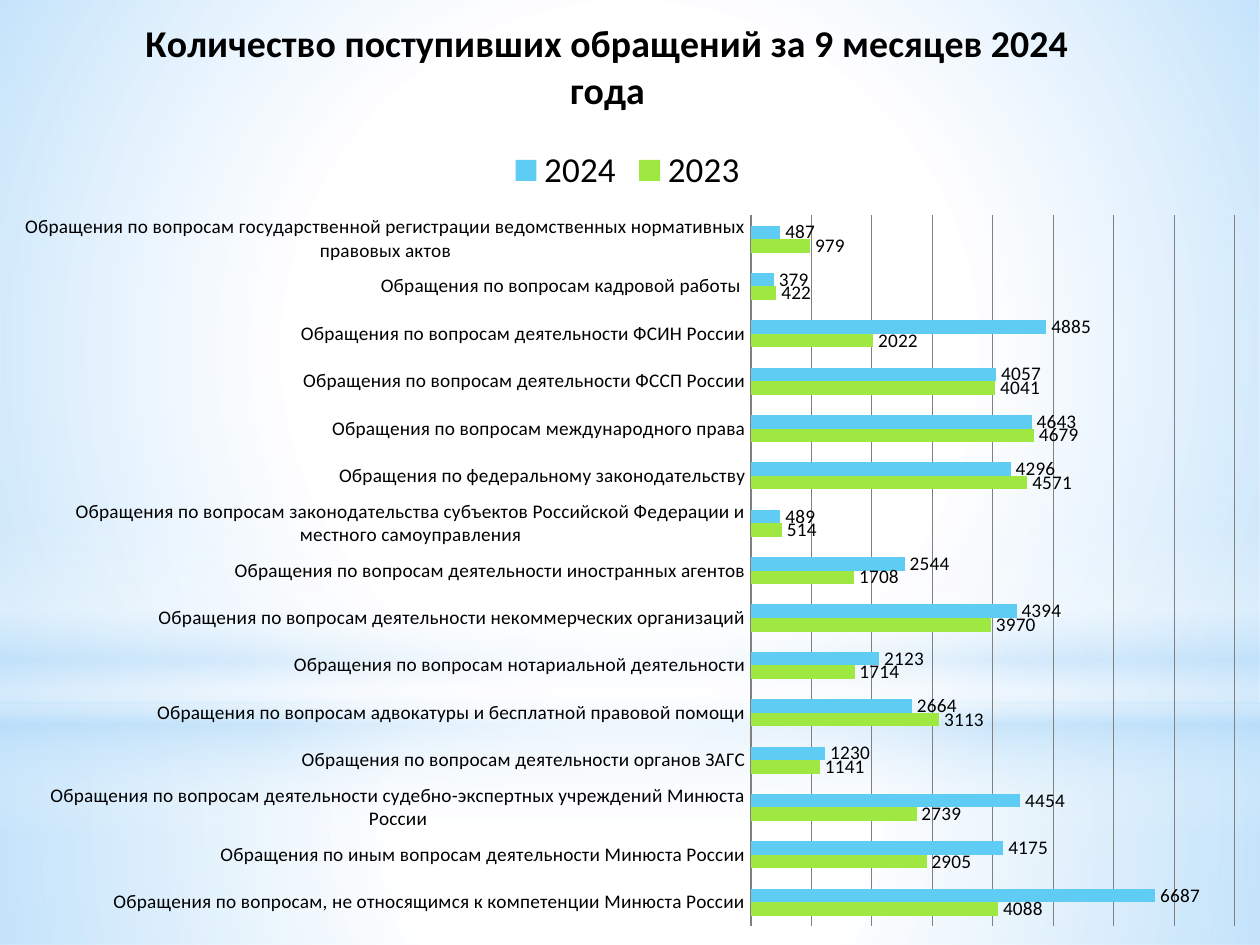
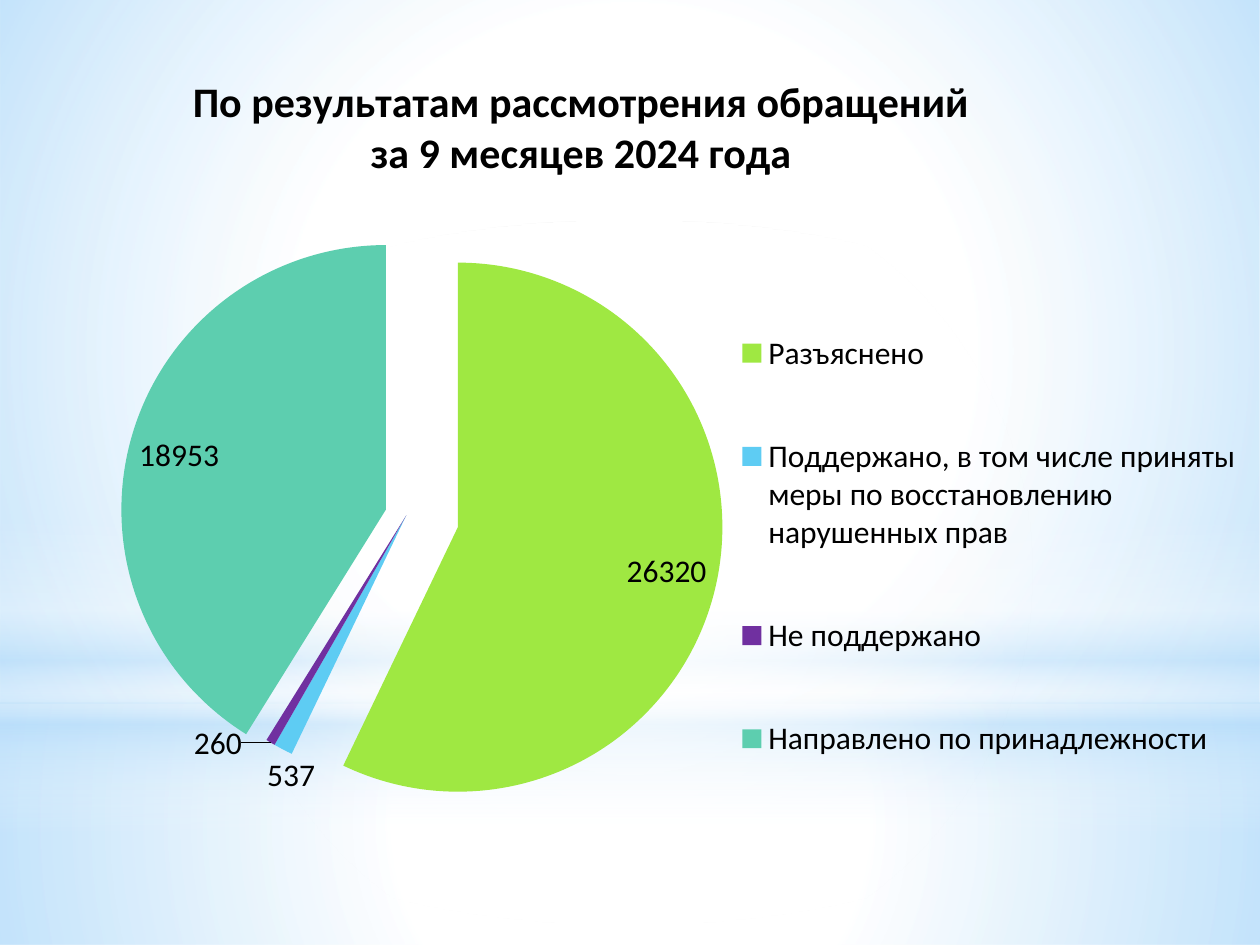
from pptx import Presentation
from pptx.chart.data import CategoryChartData as Data
from pptx.dml.color import RGBColor
from pptx.enum.chart import XL_CHART_TYPE as Kind, XL_LABEL_POSITION as Spot
from pptx.enum.chart import XL_LEGEND_POSITION as Side, XL_TICK_MARK as Tick
from pptx.enum.shapes import MSO_SHAPE as Form
from pptx.oxml import parse_xml
from pptx.oxml.ns import nsdecls
from pptx.util import Inches, Pt

WIDE, HIGH = Inches(10), Inches(7.5)
FONT, BASE = "Calibri", "Lato"
BLACK, GREY, WHITE, PALE = "000000", "808080", "FFFFFF", "B4DCFA"
LIME, SKY, PURPLE, TEAL = "9FE842", "5ECCF3", "7030A0", "5DCEAF"

# Topic, 2023, 2024; the first row is the lowest bar
TOPICS = [
    ("Обращения по вопросам, не относящимся к компетенции Минюста России", 4088, 6687),
    ("Обращения по иным вопросам деятельности Минюста России", 2905, 4175),
    ("Обращения по вопросам деятельности судебно-экспертных учреждений Минюста России",
     2739, 4454),
    ("Обращения по вопросам деятельности органов ЗАГС", 1141, 1230),
    ("Обращения по вопросам адвокатуры и бесплатной правовой помощи", 3113, 2664),
    ("Обращения по вопросам нотариальной деятельности", 1714, 2123),
    ("Обращения по вопросам деятельности некоммерческих организаций", 3970, 4394),
    ("Обращения по вопросам деятельности иностранных агентов", 1708, 2544),
    ("Обращения по вопросам законодательства субъектов Российской Федерации "
     "и местного самоуправления", 514, 489),
    ("Обращения по федеральному законодательству", 4571, 4296),
    ("Обращения по вопросам международного права", 4679, 4643),
    ("Обращения по вопросам деятельности ФССП России", 4041, 4057),
    ("Обращения по вопросам деятельности ФСИН России", 2022, 4885),
    ("Обращения по вопросам кадровой работы ", 422, 379),
    ("Обращения по вопросам государственной регистрации ведомственных "
     "нормативных правовых актов", 979, 487),
]
# Result, count, colour, shift of the slice in percent
RESULTS = [
    ("Разъяснено", 26320, LIME, 20),
    ("Поддержано, в том числе приняты меры по восстановлению нарушенных прав",
     537, SKY, 0),
    ("Не поддержано", 260, PURPLE, 0),
    ("Направлено по принадлежности", 18953, TEAL, 8),
]


def paint(fill, color):
    fill.solid()
    fill.fore_color.rgb = RGBColor.from_string(color)


def style(font, size, name=FONT, bold=False):
    font.name, font.size, font.bold = name, Pt(size), bold
    font.color.rgb = RGBColor.from_string(BLACK)


def blend(shape, stops, angle=None):
    """Fill with stops of (percent, colour, opacity); round when no angle is given."""
    marks = "".join(
        f'<a:gs pos="{pos * 1000}"><a:srgbClr val="{color}">'
        f'<a:alpha val="{alpha * 1000}"/></a:srgbClr></a:gs>'
        for pos, color, alpha in stops)
    if angle is None:
        way = ('<a:path path="circle"><a:fillToRect l="50000" t="50000" '
               'r="50000" b="50000"/></a:path>')
    else:
        way = f'<a:lin ang="{angle * 60000}" scaled="0"/>'
    shape.element.spPr.insert(2, parse_xml(
        f'<a:gradFill {nsdecls("a")} rotWithShape="1"><a:gsLst>{marks}</a:gsLst>'
        f'{way}</a:gradFill>'))


def glow(slide, master, form, top, high, stops, angle=None):
    """Put a full-width gradient shape on the master."""
    shape = slide.shapes.add_shape(form, 0, Inches(top), WIDE, Inches(high))
    shape.shadow.inherit = False
    shape.line.fill.background()
    blend(shape, stops, angle)
    master.shapes.element.append(shape.element)


def backdrop(slide, master):
    glow(slide, master, Form.RECTANGLE, 5.58, 1.92,
         [(0, WHITE, 91), (37, WHITE, 76), (100, PALE, 79)])
    glow(slide, master, Form.RECTANGLE, 0, 5.58,
         [(0, WHITE, 89), (48, WHITE, 62), (100, PALE, 79)])
    glow(slide, master, Form.RECTANGLE, 4.12, 2.5,
         [(0, WHITE, 0), (29, WHITE, 30), (45, PALE, 40),
          (55, WHITE, 26), (65, PALE, 60), (100, WHITE, 0)], 90)
    glow(slide, master, Form.OVAL, 1.75, 5.58, [(0, WHITE, 100), (56, WHITE, 0)])


def place(chart, part, index, **share):
    """Fix a chart part at x, y (and w, h), given as shares of the chart."""
    node = chart.element.xpath(f"c:chart/c:{part}")[0]
    for old in node.xpath("c:layout"):
        node.remove(old)
    inner = '<c:layoutTarget val="inner"/>' if part == "plotArea" else ""
    modes = "".join(f'<c:{key}Mode val="edge"/>' for key in share if key in "xy")
    sizes = "".join(f'<c:{key} val="{val}"/>' for key, val in share.items())
    node.insert(index, parse_xml(
        f'<c:layout {nsdecls("c")}><c:manualLayout>{inner}{modes}{sizes}'
        f'</c:manualLayout></c:layout>'))


def add_chart(slide, kind, data, top=0):
    frame = slide.shapes.add_chart(kind, 0, Inches(top), WIDE, HIGH - Inches(top), data)
    style(frame.chart.font, 18, BASE)
    return frame.chart


def add_title(chart, lines, size, x, y):
    frame = chart.chart_title.text_frame
    frame.text = "\n".join(lines)
    for para in frame.paragraphs:
        style(para.font, size, bold=True)
    place(chart, "title", 1, x=x, y=y)


def add_legend(chart, side, size, **share):
    chart.has_legend = True
    chart.legend.position = side
    chart.legend.include_in_layout = False
    style(chart.legend.font, size)
    place(chart, "legend", 1, **share)


def label(series, size, spot):
    tags = series.data_labels
    tags.show_value = True
    tags.position = spot
    style(tags.font, size)


def explode(node, share):
    """Shift a slice outwards; node is the element that comes just before."""
    node.addnext(parse_xml(f'<c:explosion {nsdecls("c")} val="{share}"/>'))


def bars(slide):
    names, old, new = zip(*TOPICS)
    data = Data()
    data.categories = names
    data.add_series("2023", old)
    data.add_series("2024", new)
    chart = add_chart(slide, Kind.BAR_CLUSTERED, data)
    add_title(chart, ["Количество поступивших обращений за 9 месяцев 2024 года"],
              21.6, 0.11, 0.01)
    add_legend(chart, Side.TOP, 20, x=0.4, y=0.15)
    place(chart, "plotArea", 0, x=0.596, y=0.228, w=0.384, h=0.752)
    plot = chart.plots[0]
    plot.gap_width = 150
    plot.vary_by_categories = False
    for series, color in zip(plot.series, (LIME, SKY)):
        paint(series.format.fill, color)
        label(series, 11, Spot.OUTSIDE_END)
    topics, scale = chart.category_axis, chart.value_axis
    style(topics.tick_labels.font, 11)
    topics.major_tick_mark = topics.minor_tick_mark = Tick.NONE
    scale.visible = False
    scale.minimum_scale, scale.maximum_scale, scale.major_unit = 0, 8000, 1000
    scale.has_major_gridlines = True
    for line in (topics.format.line, scale.major_gridlines.format.line):
        paint(line.fill, GREY)
        line.width = Pt(0.75)


def pie(slide):
    names, counts, colors, shifts = zip(*RESULTS)
    data = Data()
    data.categories = names
    data.add_series("Series 1", counts)
    chart = add_chart(slide, Kind.PIE, data, 0.05)
    add_title(chart, ["По результатам рассмотрения обращений", "за 9 месяцев 2024 года"],
              24, 0.15, 0.07)
    add_legend(chart, Side.RIGHT, 18, x=0.58, y=0.28, w=0.41, h=0.59)
    place(chart, "plotArea", 0, x=0.06, y=0.189, w=0.525, h=0.707)
    series = chart.plots[0].series[0]
    for i, color in enumerate(colors):
        paint(series.points[i].format.fill, color)
    label(series, 18, Spot.BEST_FIT)
    for mark, shift in zip(chart.element.xpath(".//c:dPt/c:idx"), shifts):
        explode(mark, shift)
    explode(chart.element.xpath(".//c:ser/c:tx")[0], 25)


def main():
    deck = Presentation()
    deck.slide_width, deck.slide_height = WIDE, HIGH
    blank = deck.slide_layouts[6]
    first, second = (deck.slides.add_slide(blank) for _ in range(2))
    backdrop(first, deck.slide_master)
    bars(first)
    pie(second)
    deck.save("out.pptx")


if __name__ == "__main__":
    main()
